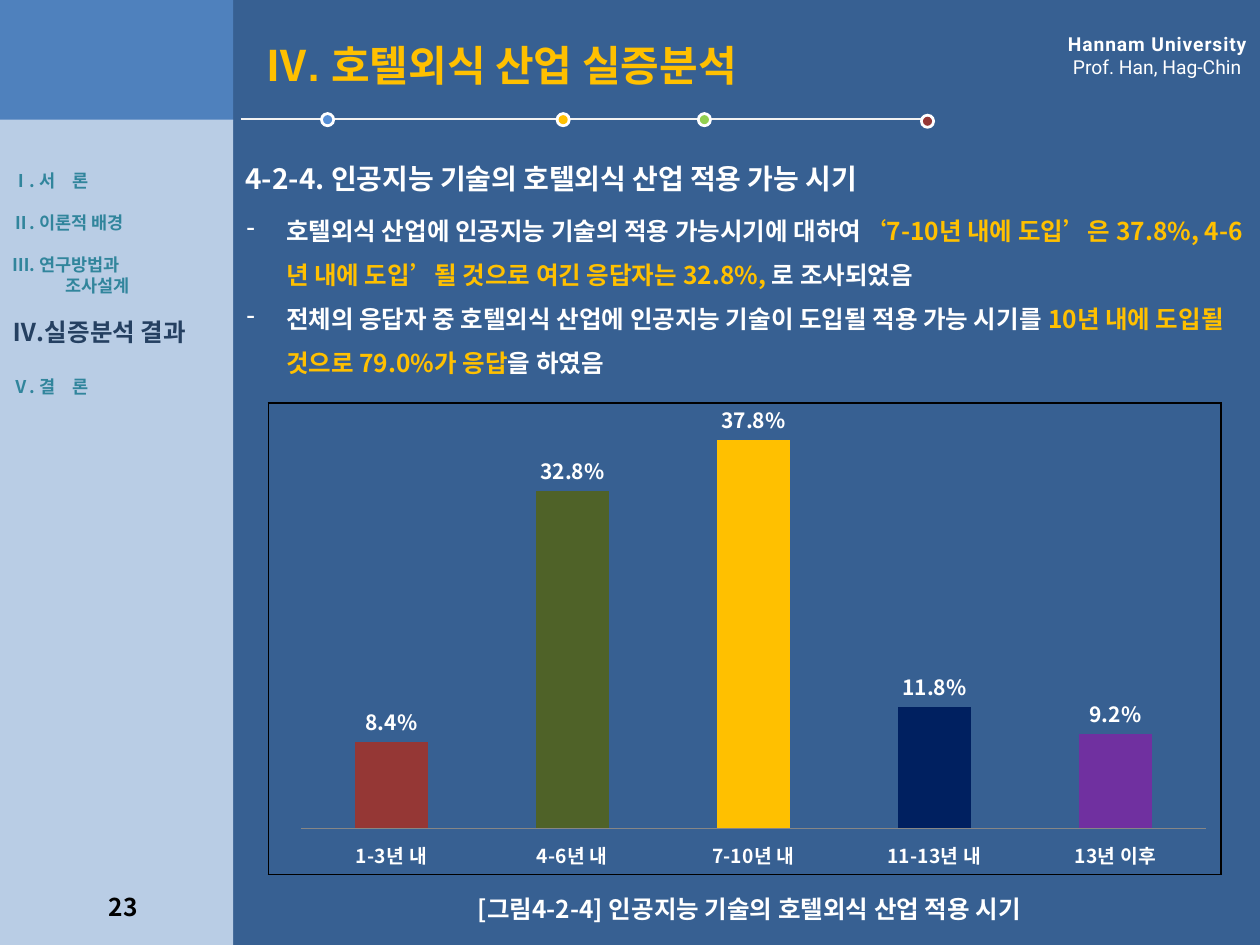
from lxml import etree
from pptx import Presentation
from pptx.chart.data import CategoryChartData
from pptx.dml.color import RGBColor
from pptx.enum.chart import XL_CHART_TYPE, XL_LABEL_POSITION, XL_TICK_LABEL_POSITION, XL_TICK_MARK
from pptx.enum.shapes import MSO_CONNECTOR, MSO_SHAPE
from pptx.enum.text import MSO_ANCHOR, MSO_AUTO_SIZE, PP_ALIGN
from pptx.oxml import parse_xml
from pptx.oxml.ns import nsdecls, qn
from pptx.util import Pt

RECT, OVAL = MSO_SHAPE.RECTANGLE, MSO_SHAPE.OVAL
LEFT, CENTER = PP_ALIGN.LEFT, PP_ALIGN.CENTER
TOP, MIDDLE = MSO_ANCHOR.TOP, MSO_ANCHOR.MIDDLE
NO_TICK = XL_TICK_MARK.NONE

KR, JP = "Noto Sans CJK KR", "Noto Sans CJK JP"
WHITE, BLACK, GOLD, TEAL, NAVY = "FFFFFF", "000000", "FFC000", "31859C", "254061"

# left, top, width, height, colour
PANELS = [
    (133.2, 0, 586.8, 540, "376092"),
    (0, 0, 133.2, 69.1, "4F81BD"),
    (0, 68.4, 133.2, 471.6, "B9CDE5"),
]
# centre x, centre y, colour
DOTS = [(321.8, 68.4, GOLD), (187.2, 68.4, "558ED5"),
        (402.5, 68.4, "92D050"), (530, 69.3, "953735")]
DOT_RING, DOT_CORE = 8.6, 5.2

TITLE = [("Ⅳ", JP), (". ", "Arial"), ("호텔외식 산업 실증분석", KR)]
# text, size, colour, space before, left margin, first-line indent
CONTENTS = [
    ("Ⅰ. 서　론", 10, TEAL, 0, 27, -27),
    ("Ⅱ. 이론적 배경", 10, TEAL, 12, 27, -27),
    ("Ⅲ. 연구방법과", 10, TEAL, 12, 27, -27),
    ("조사설계", 10, TEAL, 0, 30.5, 0),
    ("Ⅳ.실증분석 결과", 14, NAVY, 12, 27, -27),
    ("Ⅴ. 결　론", 10, TEAL, 17, 27, -27),
]
HEADING = "4-2-4. 인공지능 기술의 호텔외식 산업 적용 가능 시기"
FINDINGS = [
    [("호텔외식 산업에 인공지능 기술의 적용 가능시기에 대하여", WHITE),
     ("‘7-10년 내에 도입’은 37.8%, 4-6년 내에 도입’될 것으로 여긴 응답자는 32.8%, ", GOLD),
     ("로 조사되었음", WHITE)],
    [("전체의 응답자 중 호텔외식 산업에 인공지능 기술이 도입될 적용 가능 시기를 ", WHITE),
     ("10년 내에 도입될 것으로 79.0%가 응답", GOLD),
     ("을 하였음", WHITE)],
]
CAPTION = "[그림4-2-4] 인공지능 기술의 호텔외식 산업 적용 시기"
PERIODS = [
    ("1-3년 내", 0.084, "953735"),
    ("4-6년 내", 0.328, "4F6228"),
    ("7-10년 내", 0.378, GOLD),
    ("11-13년 내", 0.118, "002060"),
    ("13년 이후", 0.092, "7030A0"),
]
PLOT_AREA = {"x": 0.02, "y": 0.03, "w": 0.96, "h": 0.88}


def rgb(colour):
    return RGBColor.from_string(colour)


def box(left, top, width, height):
    return Pt(left), Pt(top), Pt(width), Pt(height)


def style(font, size, colour, bold=True, name=KR):
    font.size, font.bold, font.name = Pt(size), bold, name
    font.color.rgb = rgb(colour)


def add_run(paragraph, text, size, colour, bold=True, name=KR):
    run = paragraph.add_run()
    run.text = text
    style(run.font, size, colour, bold, name)
    etree.SubElement(run.font._element, qn("a:ea"), typeface=name)
    return run


def add_text(place, anchor=TOP):
    frame = slide.shapes.add_textbox(*box(*place)).text_frame
    frame.word_wrap = True
    frame.vertical_anchor = anchor
    return frame


def paragraphs(frame, items):
    """Yield one paragraph per item, using the frame's first one first."""
    for i, item in enumerate(items):
        yield (frame.add_paragraph() if i else frame.paragraphs[0]), item


def add_line_of_text(place, text, size, colour, align=LEFT, anchor=TOP):
    paragraph = add_text(place, anchor).paragraphs[0]
    paragraph.alignment = align
    add_run(paragraph, text, size, colour)


def set_indent(paragraph, margin, first):
    properties = paragraph._p.get_or_add_pPr()
    properties.set("marL", str(Pt(margin)))
    properties.set("indent", str(Pt(first)))
    return properties


def add_filled(kind, place, colour):
    shape = slide.shapes.add_shape(kind, *box(*place))
    shape.shadow.inherit = False
    shape.fill.solid()
    shape.fill.fore_color.rgb = rgb(colour)
    shape.line.fill.background()


def add_frame(place):
    """Add the one-cell table that frames the chart."""
    table = slide.shapes.add_table(1, 1, *box(*place)).table
    cell = table.cell(0, 0)
    cell.fill.background()
    for i, side in enumerate(("lnL", "lnR", "lnT", "lnB")):
        cell._tc.get_or_add_tcPr().insert(i, parse_xml(
            f'<a:{side} {nsdecls("a")} w="{Pt(1)}"><a:solidFill>'
            f'<a:srgbClr val="{BLACK}"/></a:solidFill></a:{side}>'))


def add_period_chart(place):
    data = CategoryChartData(number_format="0.0%")
    data.categories = [period for period, _, _ in PERIODS]
    data.add_series("Series 1", [share for _, share, _ in PERIODS])
    chart = slide.shapes.add_chart(XL_CHART_TYPE.COLUMN_CLUSTERED, *box(*place), data).chart
    chart.has_legend = chart.has_title = False
    style(chart.font, 10, BLACK, False)

    plot = chart.plots[0]
    plot.gap_width, plot.overlap, plot.vary_by_categories = 150, -25, False
    for i, (_, _, colour) in enumerate(PERIODS):
        fill = plot.series[0].points[i].format.fill
        fill.solid()
        fill.fore_color.rgb = rgb(colour)
    plot.has_data_labels = True
    labels = plot.data_labels
    labels.show_value = True
    labels.number_format, labels.number_format_is_linked = "0.0%", False
    labels.position = XL_LABEL_POSITION.OUTSIDE_END
    style(labels.font, 12, WHITE)

    periods, shares = chart.category_axis, chart.value_axis
    periods.major_tick_mark = periods.minor_tick_mark = NO_TICK
    periods.tick_label_position = XL_TICK_LABEL_POSITION.LOW
    periods.format.line.color.rgb = rgb("868686")
    style(periods.tick_labels.font, 11, WHITE)
    shares.minimum_scale, shares.maximum_scale, shares.major_unit = 0, 0.4, 0.1
    shares.has_major_gridlines = shares.visible = False

    area = chart._chartSpace.chart.plotArea
    for old in area.findall(qn("c:layout")):
        area.remove(old)
    sizes = "".join(f'<c:{key} val="{value}"/>' for key, value in PLOT_AREA.items())
    area.insert(0, parse_xml(
        f'<c:layout {nsdecls("c")}><c:manualLayout><c:layoutTarget val="inner"/>'
        f'<c:xMode val="edge"/><c:yMode val="edge"/>{sizes}</c:manualLayout></c:layout>'))


deck = Presentation()
deck.slide_width, deck.slide_height = Pt(720), Pt(540)
slide = deck.slides.add_slide(deck.slide_layouts[5])

for *place, colour in PANELS:
    add_filled(RECT, place, colour)
add_line_of_text((50.4, 506.2, 40.3, 22.3), "23", 14, BLACK, CENTER)

affiliation = [("Hannam University", True), ("Prof. Han, Hag-Chin", False)]
for paragraph, (text, bold) in paragraphs(add_text((583.9, 15.1, 154.8, 33.8)), affiliation):
    paragraph.alignment = CENTER
    run = add_run(paragraph, text, 11, WHITE, bold, "Roboto")
    if bold:
        run.font._element.set("spc", "50")

rule = slide.shapes.add_connector(MSO_CONNECTOR.STRAIGHT, Pt(137.5), Pt(68.2), Pt(528.5), Pt(68.2))
rule.line.color.rgb, rule.line.width = rgb("F2F2F2"), Pt(1.25)
etree.SubElement(rule._element.spPr, qn("a:effectLst"))
for x, y, colour in DOTS:
    for size, shade in ((DOT_RING, WHITE), (DOT_CORE, colour)):
        add_filled(OVAL, (x - size / 2, y - size / 2, size, size), shade)

contents = add_text((0, 71.3, 133.2, 181.4), MIDDLE)
for paragraph, (text, size, colour, before, margin, first) in paragraphs(contents, CONTENTS):
    set_indent(paragraph, margin, first)
    paragraph.space_before = Pt(before)
    add_run(paragraph, text, size, colour)

title = slide.shapes.title
title.left, title.top, title.width, title.height = box(144.7, 18.7, 391, 36)
title.text_frame.auto_size = MSO_AUTO_SIZE.NONE
title.text_frame.vertical_anchor = TOP
title.text_frame.paragraphs[0].alignment = LEFT
for text, name in TITLE:
    add_run(title.text_frame.paragraphs[0], text, 24, GOLD, name=name)
slide.shapes._spTree.append(title._element)  # in front of the panels

add_line_of_text((133.2, 88.6, 586.8, 26.6), HEADING, 16, WHITE)
add_frame((153.4, 230.4, 544.3, 269.3))
add_period_chart((161.3, 230.4, 538.6, 267.1))
add_line_of_text((156.2, 506.9, 544.3, 24.5), CAPTION, 14, WHITE, CENTER, MIDDLE)

for paragraph, runs in paragraphs(add_text((133.9, 111.6, 586.1, 113)), FINDINGS):
    etree.SubElement(set_indent(paragraph, 22.5, -22.5), qn("a:buChar"), char="-")
    paragraph.line_spacing = 1.5
    for text, colour in runs:
        add_run(paragraph, text, 14, colour)

deck.save("out.pptx")
